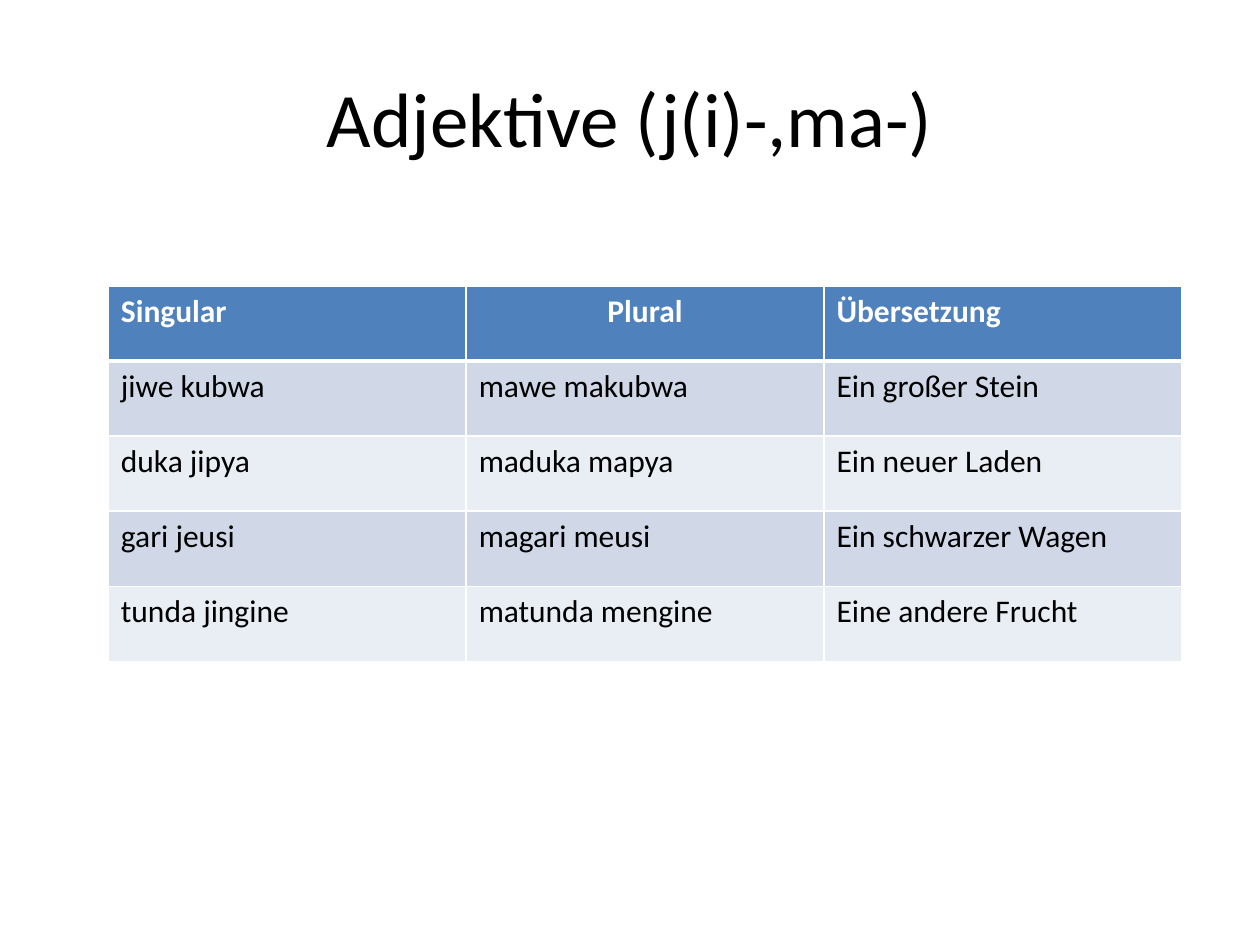
from lxml import etree
from pptx import Presentation
from pptx.dml.color import RGBColor
from pptx.enum import text
from pptx.oxml import ns
from pptx.util import Inches, Pt

# Content
TITLE = "Adjektive (j(i)-,ma-)"
ROWS = [
    ("Singular", "Plural", "Übersetzung"),
    ("jiwe kubwa", "mawe makubwa", "Ein großer Stein"),
    ("duka jipya", "maduka mapya", "Ein neuer Laden"),
    ("gari jeusi", "magari meusi", "Ein schwarzer Wagen"),
    ("tunda jingine", "matunda mengine", "Eine andere Frucht"),
]
HEAD, BANDS = "4F81BD", ("D0D8E8", "E9EDF4")
WHITE, BLACK = "FFFFFF", "000000"
LEFT, TOP, WIDTH, HEIGHT = 0.86, 2.27, 8.52, 2.98


def style(para, color, **form):
    for name, value in {"name": "Calibri", **form}.items():
        setattr(para.font, name, value)
    para.font.color.rgb = RGBColor.from_string(color)


def edge(cell, side, width):
    props = cell._tc.get_or_add_tcPr()
    line = etree.SubElement(props, ns.qn(f"a:ln{side}"), w=str(Pt(width)))
    fill = etree.SubElement(line, ns.qn("a:solidFill"))
    etree.SubElement(fill, ns.qn("a:srgbClr"), val=WHITE)


def main():
    prs = Presentation()
    prs.slide_width, prs.slide_height = Inches(10), Inches(7.5)
    slide = prs.slides.add_slide(prs.slide_layouts[5])

    # Title
    title = slide.shapes.title
    box = {"left": 0.5, "top": 0.3, "width": 9, "height": 1.25}
    for name, value in box.items():
        setattr(title, name, Inches(value))
    title.text_frame.text = TITLE
    title.text_frame.vertical_anchor = text.MSO_ANCHOR.MIDDLE
    para = title.text_frame.paragraphs[0]
    para.alignment = text.PP_ALIGN.CENTER
    style(para, BLACK, size=Pt(44))

    # Table
    area = [Inches(n) for n in (LEFT, TOP, WIDTH, HEIGHT)]
    table = slide.shapes.add_table(len(ROWS), len(ROWS[0]), *area).table
    for r, row in enumerate(ROWS):
        head = r == 0
        back = HEAD if head else BANDS[(r - 1) % 2]
        # A thick rule parts the header from the body
        widths = {"L": 1, "R": 1, "T": 3 if r == 1 else 1, "B": 3 if head else 1}
        for c, word in enumerate(row):
            cell = table.cell(r, c)
            cell.text = word
            para = cell.text_frame.paragraphs[0]
            style(para, WHITE if head else BLACK, size=Pt(18), bold=head)
            if head and c == 1:
                para.alignment = text.PP_ALIGN.CENTER
            for side, width in widths.items():
                edge(cell, side, width)
            cell.fill.solid()
            cell.fill.fore_color.rgb = RGBColor.from_string(back)

    prs.save("out.pptx")


if __name__ == "__main__":
    main()
